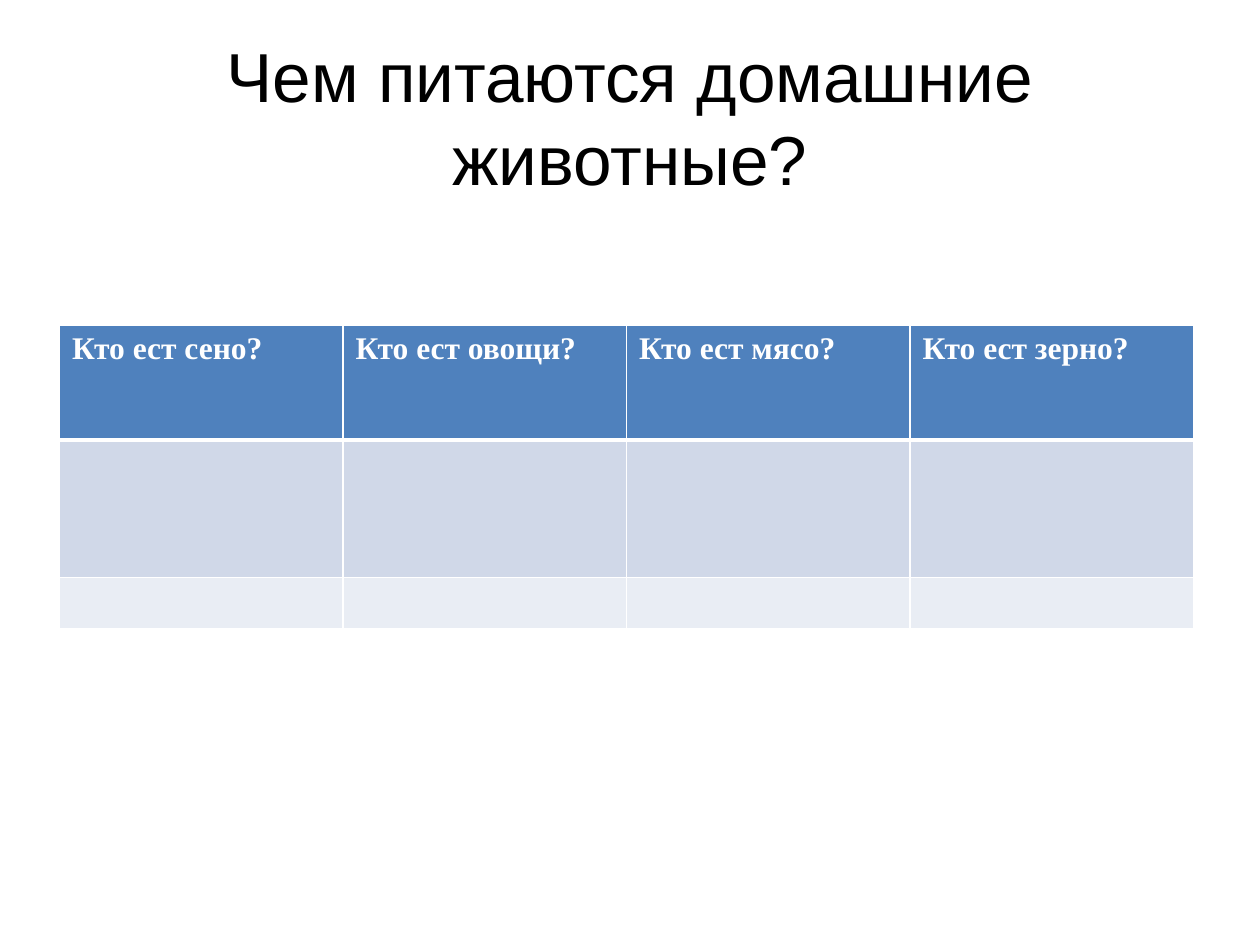
from lxml import etree
from pptx import Presentation
from pptx.dml.color import RGBColor
from pptx.enum import text
from pptx.oxml.ns import qn
from pptx.util import Pt

BLACK = RGBColor(0x00, 0x00, 0x00)
WHITE = RGBColor(0xFF, 0xFF, 0xFF)
HEADER_BLUE = RGBColor(0x4F, 0x81, 0xBD)
BAND_DARK = RGBColor(0xD0, 0xD8, 0xE8)
BAND_LIGHT = RGBColor(0xE9, 0xED, 0xF4)

QUESTIONS = ["Кто ест сено?", "Кто ест овощи?", "Кто ест мясо?", "Кто ест зерно?"]
ROWS = [(65.5, HEADER_BLUE), (78.5, BAND_DARK), (29.5, BAND_LIGHT)]
COLUMN_WIDTH = 162
TITLE_FONT = {"name": "Arial", "size": Pt(39.6)}
HEADER_FONT = {"name": "Times New Roman", "size": Pt(18), "bold": True}


def format_font(font, values, color):
    for name, value in values.items():
        setattr(font, name, value)
    font.color.rgb = color


def add_border(cell, side, width):
    """Draw a white line on one side (L, R, T or B) of the cell."""
    properties = cell._tc.get_or_add_tcPr()
    line = etree.SubElement(properties, qn(f"a:ln{side}"), w=str(Pt(width)))
    fill = etree.SubElement(line, qn("a:solidFill"))
    etree.SubElement(fill, qn("a:srgbClr"), val=str(WHITE))


presentation = Presentation()
presentation.slide_width, presentation.slide_height = Pt(720), Pt(540)
slide = presentation.slides.add_slide(presentation.slide_layouts[5])

title = slide.shapes.title
title.left, title.top, title.width, title.height = Pt(36), Pt(21.6), Pt(648), Pt(90)
title.text_frame.text = "Чем питаются домашние животные?"
title.text_frame.word_wrap = True
title.text_frame.vertical_anchor = text.MSO_ANCHOR.MIDDLE
paragraph = title.text_frame.paragraphs[0]
paragraph.alignment = text.PP_ALIGN.CENTER
format_font(paragraph.runs[0].font, TITLE_FONT, BLACK)

table = slide.shapes.add_table(
    len(ROWS), len(QUESTIONS), Pt(34), Pt(186),
    Pt(COLUMN_WIDTH * len(QUESTIONS)), Pt(sum(height for height, _ in ROWS)),
).table
for column in table.columns:
    column.width = Pt(COLUMN_WIDTH)

for row_index, (height, color) in enumerate(ROWS):
    row = table.rows[row_index]
    row.height = Pt(height)
    top = 3 if row_index == 1 else 1
    bottom = 3 if row_index == 0 else 1
    for cell in row.cells:
        for side, width in (("L", 1), ("R", 1), ("T", top), ("B", bottom)):
            add_border(cell, side, width)
        cell.fill.solid()
        cell.fill.fore_color.rgb = color

for cell, question in zip(table.rows[0].cells, QUESTIONS):
    cell.text = question
    format_font(cell.text_frame.paragraphs[0].runs[0].font, HEADER_FONT, WHITE)

presentation.save("out.pptx")
